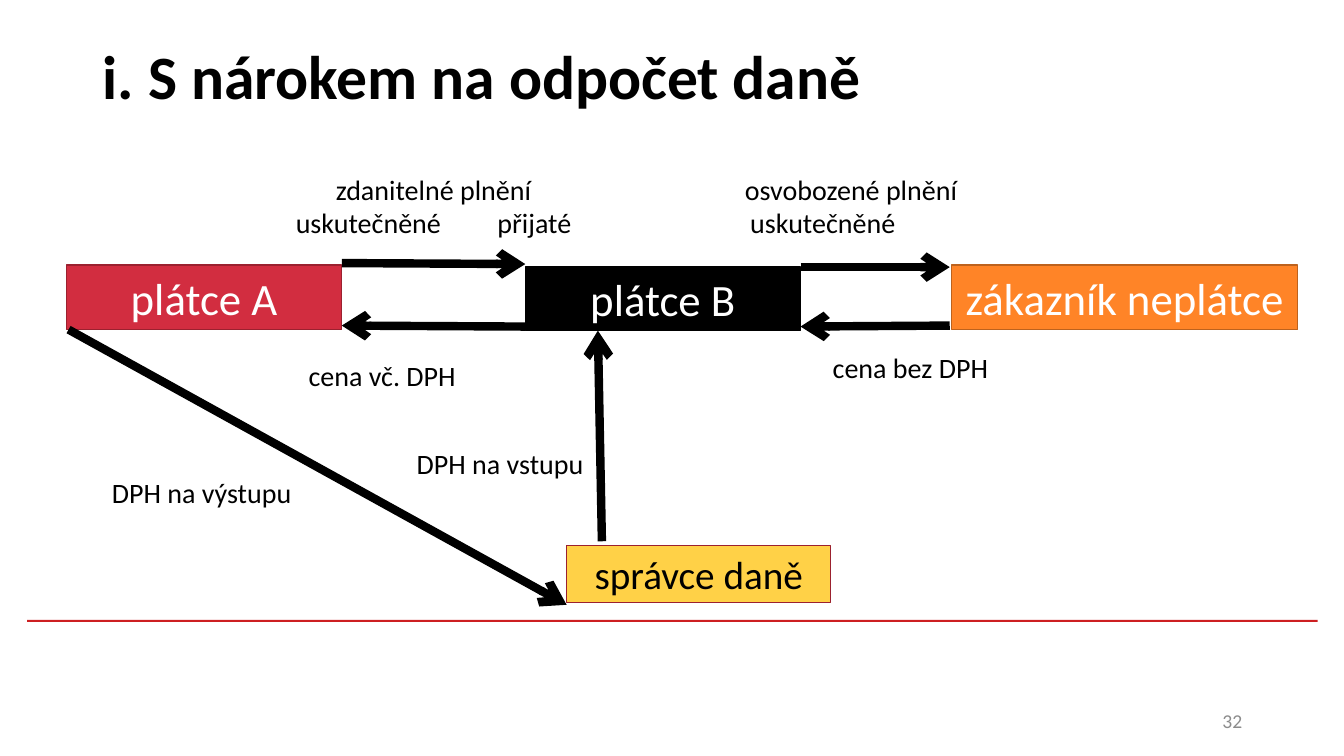
import pptx
import pptx.dml.color
import pptx.enum.shapes
import pptx.enum.text
import pptx.oxml.ns
import pptx.util
from lxml import etree
from pptx.util import Inches

ALIGN = pptx.enum.text.PP_ALIGN
ANCHOR = pptx.enum.text.MSO_ANCHOR
FONT = "Calibri"
BLACK, WHITE = "000000", "FFFFFF"

TITLE = "i. S nárokem na odpočet daně"
PAGE_NUMBER = "32"

# text, (left, top, width, height), fill, line, text colour, size
PARTIES = [
    ("plátce B", (5.21, 2.65, 2.73, 0.63), BLACK, BLACK, WHITE, 32),
    ("plátce A", (0.66, 2.63, 2.73, 0.64), "D22D40", "9B212F", WHITE, 32),
    ("zákazník neplátce", (9.44, 2.63, 3.43, 0.64), "FF8427", "BD621D", WHITE, 32),
    ("správce daně", (5.62, 5.41, 2.62, 0.57), "FFD147", "9B212F", BLACK, 28),
]

# text, left, top; \v breaks the line
SUPPLY_SIZE = (3.68, 1.28)
SUPPLIES = [
    ("zdanitelné plnění\vuskutečněné \tpřijaté", 2.46, 1.66),
    ("osvobozené plnění\vuskutečněné \t", 6.6, 1.66),
]
PAYMENT_SIZE = (2.84, 0.44)
PAYMENTS = [
    ("DPH na vstupu", 3.54, 4.38),
    ("cena vč. DPH", 2.37, 3.51),
    ("cena bez DPH", 7.61, 3.43),
    ("DPH na výstupu", 0.58, 4.67),
]

# from x, from y, to x, to y
ARROWS = [
    (3.39, 2.61, 5.21, 2.62),
    (5.21, 3.24, 3.39, 3.23),
    (7.94, 2.65, 9.42, 2.65),
    (9.42, 3.23, 7.94, 3.24),
    (5.97, 5.37, 5.93, 3.28),
    (0.68, 3.27, 5.62, 6.0),
]


def color(hex_string):
    return pptx.dml.color.RGBColor.from_string(hex_string)


def write(shape, text, size=20, ink=BLACK, bold=False, align=ALIGN.CENTER, anchor=ANCHOR.TOP):
    frame = shape.text_frame
    frame.word_wrap = True
    frame.vertical_anchor = anchor
    paragraph = frame.paragraphs[0]
    paragraph.text = text
    paragraph.alignment = align
    for run in paragraph.runs:
        run.font.name = FONT
        run.font.size = pptx.util.Pt(size)
        run.font.bold = bold
        run.font.color.rgb = color(ink)


def add_text(slide, text, box, **text_format):
    write(slide.shapes.add_textbox(*map(Inches, box)), text, **text_format)


def add_rectangle(slide, box, fill, line=None):
    rectangle = slide.shapes.add_shape(
        pptx.enum.shapes.MSO_SHAPE.RECTANGLE, *map(Inches, box))
    rectangle.shadow.inherit = False
    rectangle.fill.solid()
    rectangle.fill.fore_color.rgb = color(fill)
    if line:
        rectangle.line.color.rgb = color(line)
        rectangle.line.width = pptx.util.Pt(1)
    else:
        rectangle.line.fill.background()
    return rectangle


def add_arrow(slide, ends):
    arrow = slide.shapes.add_connector(
        pptx.enum.shapes.MSO_CONNECTOR.STRAIGHT, *map(Inches, ends))
    arrow.line.color.rgb = color(BLACK)
    arrow.line.width = pptx.util.Pt(6)
    qn = pptx.oxml.ns.qn
    properties = arrow.element.find(qn("p:spPr"))
    etree.SubElement(properties.find(qn("a:ln")), qn("a:tailEnd"), type="arrow")
    etree.SubElement(properties, qn("a:effectLst"))


def main():
    presentation = pptx.Presentation()
    presentation.slide_width = Inches(13.33)
    presentation.slide_height = Inches(7.5)
    slide = presentation.slides.add_slide(presentation.slide_layouts[6])

    add_rectangle(slide, (0.27, 6.15, 12.8, 0.02), "CD1F21")
    add_text(slide, TITLE, (0.92, 0.02, 11.5, 1.45), size=44, bold=True,
             align=ALIGN.LEFT, anchor=ANCHOR.MIDDLE)
    add_text(slide, PAGE_NUMBER, (9.42, 6.95, 3, 0.4), size=14, ink="8C8C8C",
             align=ALIGN.RIGHT, anchor=ANCHOR.MIDDLE)

    for text, box, fill, line, ink, size in PARTIES:
        party = add_rectangle(slide, box, fill, line)
        write(party, text, size=size, ink=ink, anchor=ANCHOR.MIDDLE)
    for labels, label_size in ((SUPPLIES, SUPPLY_SIZE), (PAYMENTS, PAYMENT_SIZE)):
        for text, left, top in labels:
            add_text(slide, text, (left, top, *label_size))
    for ends in ARROWS:
        add_arrow(slide, ends)

    presentation.save("out.pptx")


if __name__ == "__main__":
    main()
